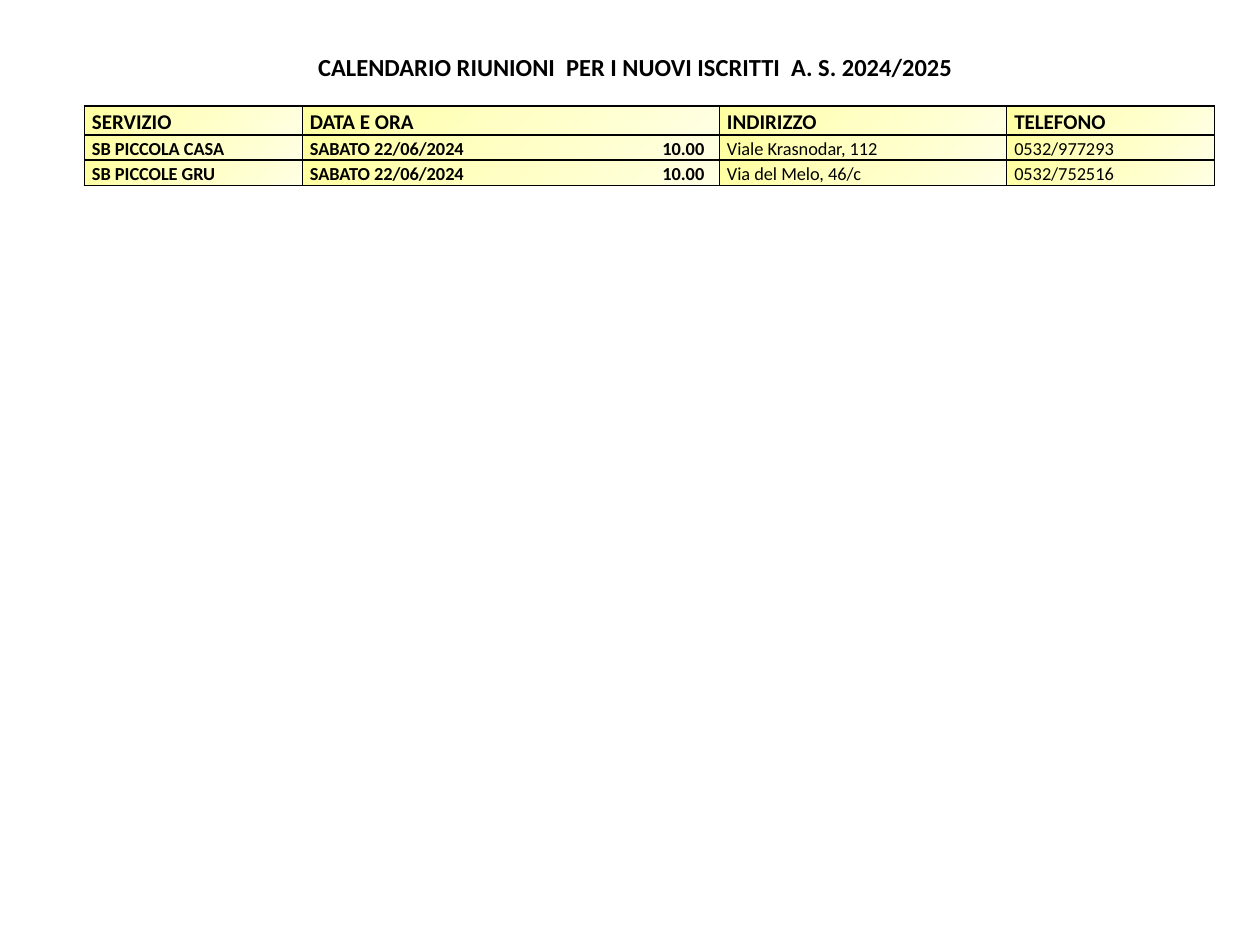
from lxml import etree
from pptx import Presentation
from pptx.dml.color import RGBColor
from pptx.enum.text import MSO_ANCHOR, MSO_AUTO_SIZE, PP_ALIGN
from pptx.oxml.ns import qn
from pptx.util import Inches, Pt

FONT = "Calibri"
BLACK = "000000"
GRADIENT = [(0, "FFFFA0"), (50, "FFFFC5"), (100, "FFFFE3")]
COLUMN_WIDTHS = [1.73, 3.31, 2.28, 1.65]
ROW_HEIGHTS = [0.23, 0.2, 0.2]
TIME_TAB = 3.13
MEETINGS = [
    ["SERVIZIO", "DATA E ORA", "INDIRIZZO", "TELEFONO"],
    ["SB PICCOLA CASA", "SABATO 22/06/2024\t10.00", "Viale Krasnodar, 112", "0532/977293"],
    ["SB PICCOLE GRU", "SABATO 22/06/2024\t10.00", "Via del Melo, 46/c", "0532/752516"],
]


def rgb(hex_color):
    return RGBColor.from_string(hex_color)


def add_run(paragraph, text, size, bold):
    run = paragraph.add_run()
    run.text = text
    run.font.name = FONT
    run.font.size = Pt(size)
    run.font.bold = bold
    run.font.color.rgb = rgb(BLACK)


def add_element(parent, tag, **attributes):
    return etree.SubElement(parent, qn(tag), attributes)


def style_cell(cell):
    """Give the cell a thin black border and the yellow gradient."""
    properties = cell._tc.get_or_add_tcPr()
    for side in ("L", "R", "T", "B"):
        border = add_element(properties, f"a:ln{side}", w=str(Pt(1)))
        border_fill = add_element(border, "a:solidFill")
        add_element(border_fill, "a:srgbClr", val=BLACK)
    gradient = add_element(properties, "a:gradFill", rotWithShape="1")
    stops = add_element(gradient, "a:gsLst")
    for position, color in GRADIENT:
        stop = add_element(stops, "a:gs", pos=str(position * 1000))
        add_element(stop, "a:srgbClr", val=color)
    add_element(gradient, "a:lin", ang=str(45 * 60000), scaled="0")


def add_time_tab(paragraph):
    """Align the meeting time on a right tab."""
    tabs = add_element(paragraph._p.get_or_add_pPr(), "a:tabLst")
    add_element(tabs, "a:tab", pos=str(Inches(TIME_TAB)), algn="r")


def fill_cell(cell, text, size, bold):
    cell.margin_left = cell.margin_right = Inches(0.06)
    cell.margin_top = cell.margin_bottom = 0
    style_cell(cell)
    paragraph = cell.text_frame.paragraphs[0]
    if "\t" in text:
        add_time_tab(paragraph)
    paragraph.line_spacing = 1.15
    add_run(paragraph, text, size, bold)


def place_title(slide, left, top, width, height):
    title = slide.shapes.title
    title.left, title.top = Inches(left), Inches(top)
    title.width, title.height = Inches(width), Inches(height)
    frame = title.text_frame
    frame.word_wrap = True
    frame.auto_size = MSO_AUTO_SIZE.SHAPE_TO_FIT_TEXT
    frame.vertical_anchor = MSO_ANCHOR.TOP
    heading = frame.paragraphs[0]
    heading.alignment = PP_ALIGN.CENTER
    add_run(heading, "CALENDARIO RIUNIONI  PER I NUOVI ISCRITTI  A. S. 2024/2025", 14, True)


def add_meetings_table(slide, left, top):
    table = slide.shapes.add_table(
        len(MEETINGS), len(COLUMN_WIDTHS), Inches(left), Inches(top),
        Inches(sum(COLUMN_WIDTHS)), Inches(sum(ROW_HEIGHTS)),
    ).table
    table.first_row = table.horz_banding = False
    for column, width in zip(table.columns, COLUMN_WIDTHS):
        column.width = Inches(width)
    for row_index, (row, height) in enumerate(zip(table.rows, ROW_HEIGHTS)):
        row.height = Inches(height)
        is_header = row_index == 0
        for column_index, text in enumerate(MEETINGS[row_index]):
            fill_cell(
                table.cell(row_index, column_index), text,
                size=12 if is_header else 10.5,
                bold=is_header or column_index < 2,
            )


def main():
    presentation = Presentation()
    presentation.slide_width, presentation.slide_height = Inches(10), Inches(7.5)
    slide = presentation.slides.add_slide(presentation.slide_layouts[5])
    place_title(slide, 0.28, 0.36, 9.53, 0.34)
    add_meetings_table(slide, 0.67, 0.84)
    presentation.save("out.pptx")


if __name__ == "__main__":
    main()
